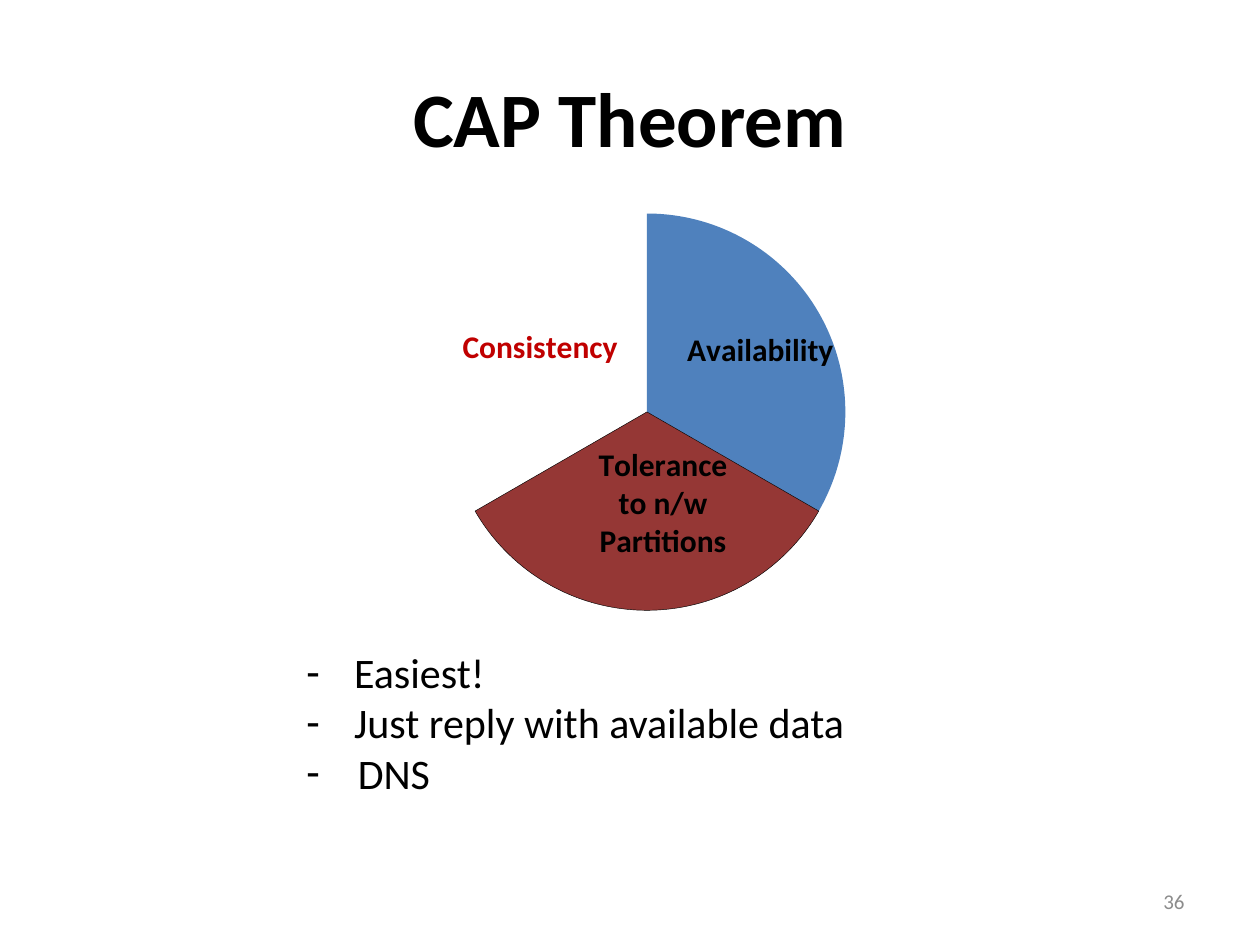
import pptx
import pptx.chart.data
import pptx.dml.color
import pptx.enum.chart
import pptx.enum.text
import pptx.oxml
import pptx.oxml.ns
import pptx.util
from pptx.util import Inches

HEX = {"ink": "000000", "blue": "4F81BD", "wine": "953735",
       "red": "C00000", "gray": "8C8C8C"}
ALIGN = pptx.enum.text.PP_ALIGN
MID = pptx.enum.text.MSO_ANCHOR.MIDDLE

# name, slice fill, slice line, label colour, label shift in chart fractions
PARTS = [
    ("Consistency", "blue", None, "red", (-0.17, -0.03)),
    ("Availability", "wine", "ink", "ink", (0.1, -0.32)),
    ("Tolerance to n/w Partitions", None, None, "ink", (0.09, 0.28)),
]
# text, hanging indent
NOTES = [("Easiest!", 0.38), ("Just reply with available data", 0.38), ("DNS", 0.41)]


def tint(name):
    return pptx.dml.color.RGBColor.from_string(HEX[name])


def style(font, size, color="ink", bold=False):
    look = {"name": "Calibri", "size": pptx.util.Pt(size), "bold": bold}
    for key, val in look.items():
        setattr(font, key, val)
    font.color.rgb = tint(color)


def place(shape, box):
    for key, val in zip(("left", "top", "width", "height"), box):
        setattr(shape, key, Inches(val))


def paint(fill, name):
    if name:
        fill.solid()
        fill.fore_color.rgb = tint(name)
    else:
        fill.background()


def layout(mode, **vals):
    """Return a manual chart layout element."""
    tags = "".join(f'<c:{key} val="{val}"/>' for key, val in vals.items())
    return pptx.oxml.parse_xml(
        f'<c:layout {pptx.oxml.ns.nsdecls("c")}><c:manualLayout>{mode}{tags}'
        "</c:manualLayout></c:layout>")


def add_title(slide, box):
    title = slide.shapes.title
    place(title, box)
    frame = title.text_frame
    frame.text = "CAP Theorem"
    frame.vertical_anchor = MID
    para = frame.paragraphs[0]
    para.alignment = ALIGN.CENTER
    style(para.runs[0].font, 44, bold=True)


def add_pie(slide, box):
    data = pptx.chart.data.CategoryChartData()
    data.categories = [part[0] for part in PARTS]
    data.add_series("Series 1", [33] * len(PARTS))
    kind = pptx.enum.chart.XL_CHART_TYPE.PIE
    chart = slide.shapes.add_chart(kind, *map(Inches, box), data).chart
    chart.has_legend = chart.has_title = False
    style(chart.font, 18)

    plot = chart.plots[0]
    plot.vary_by_categories = True
    for i, (name, fill, line, color, _) in enumerate(PARTS):
        point = plot.series[0].points[i]
        paint(point.format.fill, fill)
        paint(point.format.line.fill, line)
        if line:
            point.format.line.width = pptx.util.Pt(0.25)
        label = point.data_label
        label.text_frame.text = name
        label.position = pptx.enum.chart.XL_LABEL_POSITION.CENTER
        style(label.text_frame.paragraphs[0].runs[0].font, 18, color, True)
    for label, part in zip(chart.element.xpath(".//c:dLbl"), PARTS):
        for old in label.xpath("c:layout"):
            label.remove(old)
        x, y = part[4]
        label.insert(1, layout("", x=x, y=y))

    area = chart.element.xpath(".//c:plotArea")[0]
    for old in area.xpath("c:layout"):
        area.remove(old)
    mode = '<c:layoutTarget val="inner"/><c:xMode val="edge"/><c:yMode val="edge"/>'
    area.insert(0, layout(mode, x=0.34, y=0.09, w=0.35, h=0.79))


def add_notes(slide, box):
    body = slide.placeholders[1]
    place(body, box)
    frame = body.text_frame
    frame.word_wrap = False
    frame.auto_size = pptx.enum.text.MSO_AUTO_SIZE.SHAPE_TO_FIT_TEXT
    for i, (text, gap) in enumerate(NOTES):
        para = frame.add_paragraph() if i else frame.paragraphs[0]
        para.text = text
        para.space_before = pptx.util.Pt(0)
        style(para.runs[0].font, 24)
        props = para._p.get_or_add_pPr()
        props.set("marL", str(Inches(gap)))
        props.set("indent", str(-Inches(gap)))
        props.append(pptx.oxml.parse_xml(
            f'<a:buChar {pptx.oxml.ns.nsdecls("a")} char="-"/>'))


def add_page(slide, box):
    frame = slide.shapes.add_textbox(*map(Inches, box)).text_frame
    frame.word_wrap = True
    frame.vertical_anchor = MID
    frame.text = "36"
    para = frame.paragraphs[0]
    para.alignment = ALIGN.RIGHT
    style(para.runs[0].font, 12, "gray")


def main():
    deck = pptx.Presentation()
    deck.slide_width, deck.slide_height = Inches(10), Inches(7.5)
    slide = deck.slides.add_slide(deck.slide_layouts[1])
    add_title(slide, (0.5, 0.3, 9, 1.25))
    add_pie(slide, (0.5, 1.33, 9, 4))
    add_notes(slide, (2.33, 5.08, 4.51, 1.31))
    add_page(slide, (7.17, 6.95, 2.33, 0.4))
    deck.save("out.pptx")


if __name__ == "__main__":
    main()
